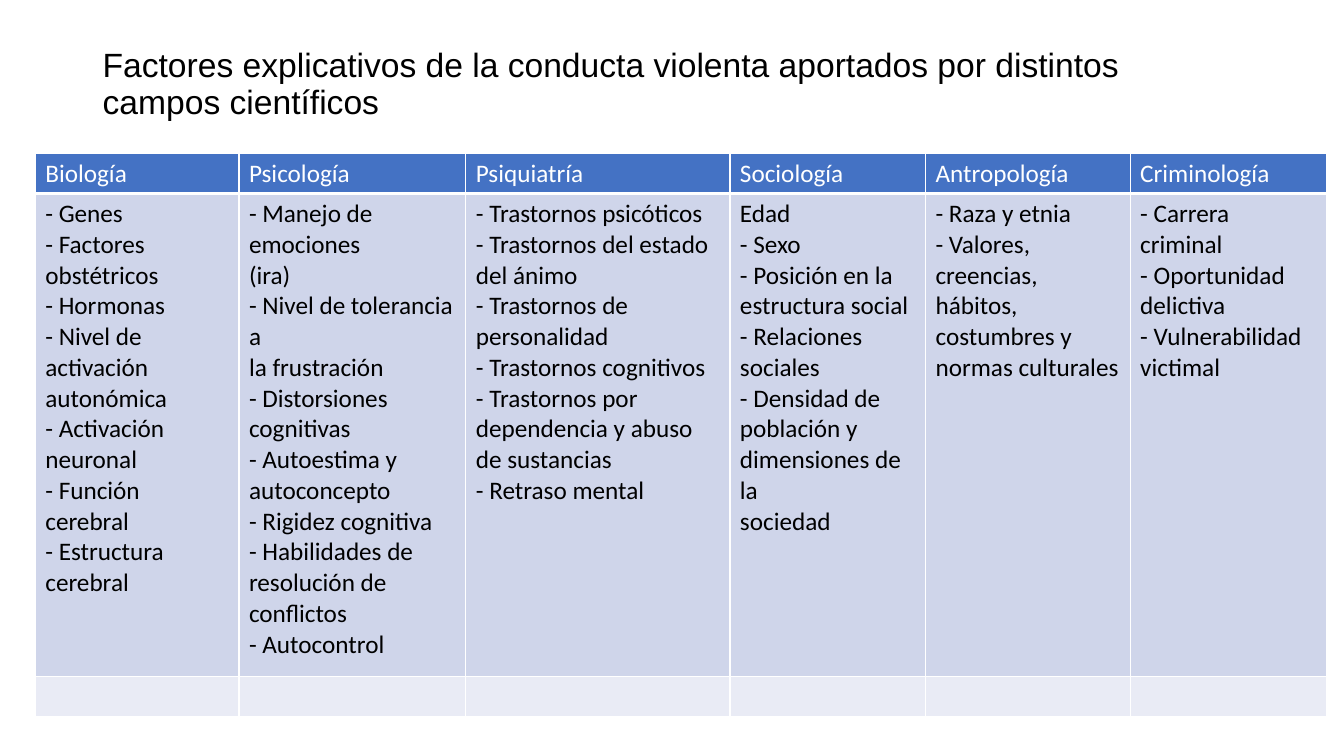
from lxml.etree import SubElement
from pptx import Presentation
from pptx.dml.color import RGBColor
from pptx.enum.text import MSO_ANCHOR
from pptx.oxml.ns import qn
from pptx.util import Pt

TITLE = "Factores explicativos de la conducta violenta aportados por distintos campos científicos"

# Field, column width in px, lines of factors
FIELDS = [
    ("Biología", 202, [
        "- Genes", "- Factores obstétricos", "- Hormonas", "- Nivel de activación",
        "autonómica", "- Activación neuronal", "- Función cerebral",
        "- Estructura cerebral"]),
    ("Psicología", 225, [
        "- Manejo de emociones", "(ira)", "- Nivel de tolerancia a", "la frustración",
        "- Distorsiones", "cognitivas", "- Autoestima y", "autoconcepto",
        "- Rigidez cognitiva", "- Habilidades de", "resolución de conflictos",
        "- Autocontrol"]),
    ("Psiquiatría", 262, [
        "- Trastornos psicóticos", "- Trastornos del estado", "del ánimo",
        "- Trastornos de", "personalidad", "- Trastornos cognitivos",
        "- Trastornos por", "dependencia y abuso", "de sustancias",
        "- Retraso mental"]),
    ("Sociología", 194, [
        "Edad", "- Sexo", "- Posición en la", "estructura social",
        "- Relaciones sociales", "- Densidad de", "población y",
        "dimensiones de la", "sociedad"]),
    ("Antropología", 203, [
        "- Raza y etnia", "- Valores, creencias,", "hábitos, costumbres y",
        "normas culturales"]),
    ("Criminología", 195, [
        "- Carrera criminal", "- Oportunidad delictiva", "- Vulnerabilidad",
        "victimal"]),
]

BLACK = RGBColor(0x00, 0x00, 0x00)
WHITE = RGBColor(0xFF, 0xFF, 0xFF)
HEADER_BLUE = RGBColor(0x44, 0x72, 0xC4)
BAND_DARK = RGBColor(0xCF, 0xD5, 0xEA)
BAND_LIGHT = RGBColor(0xE9, 0xEB, 0xF5)

# Height in px, fill, text colour, top and bottom border in points
ROWS = [
    (40, HEADER_BLUE, WHITE, 1, 3),
    (479, BAND_DARK, BLACK, 3, 1),
    (40, BAND_LIGHT, BLACK, 1, 1),
]

PX = 9144  # EMU per px, 100 px to the inch


def px(*lengths):
    return [length * PX for length in lengths]


def write_lines(frame, lines, font_name, size, color):
    """Put each line in its own paragraph."""
    for index, line in enumerate(lines):
        paragraph = frame.paragraphs[0] if index == 0 else frame.add_paragraph()
        run = paragraph.add_run()
        run.text = line
        run.font.name = font_name
        run.font.size = Pt(size)
        run.font.color.rgb = color


def add_borders(cell, top, bottom):
    """Draw white borders; they must come before the cell's fill in the XML."""
    properties = cell._tc.get_or_add_tcPr()
    sides = [("a:lnL", 1), ("a:lnR", 1), ("a:lnT", top), ("a:lnB", bottom)]
    for position, (tag, width) in enumerate(sides):
        line = SubElement(properties, qn(tag), w=str(Pt(width)))
        fill = SubElement(line, qn("a:solidFill"))
        SubElement(fill, qn("a:srgbClr"), val=str(WHITE))
        properties.insert(position, line)


def add_title(slide):
    frame = slide.shapes.add_textbox(*px(92, 40, 1150, 89)).text_frame
    frame.word_wrap = True
    frame.vertical_anchor = MSO_ANCHOR.MIDDLE
    write_lines(frame, [TITLE], "Arial", 24, BLACK)
    frame.paragraphs[0].line_spacing = 0.9


def add_factor_table(slide):
    width = sum(field[1] for field in FIELDS)
    height = sum(row[0] for row in ROWS)
    table = slide.shapes.add_table(
        len(ROWS), len(FIELDS), *px(35, 152, width, height)).table
    for column, (_, column_width, _) in zip(table.columns, FIELDS):
        column.width = column_width * PX
    for r, (row_height, fill, color, top, bottom) in enumerate(ROWS):
        table.rows[r].height = row_height * PX
        for c, (field, _, factors) in enumerate(FIELDS):
            cell = table.cell(r, c)
            cell.fill.solid()
            cell.fill.fore_color.rgb = fill
            add_borders(cell, top, bottom)
            lines = ([field], factors, [])[r]
            write_lines(cell.text_frame, lines, "Calibri", 18, color)


def main():
    presentation = Presentation()
    presentation.slide_width, presentation.slide_height = px(1333, 750)
    slide = presentation.slides.add_slide(presentation.slide_layouts[6])
    add_title(slide)
    add_factor_table(slide)
    presentation.save("out.pptx")


if __name__ == "__main__":
    main()
